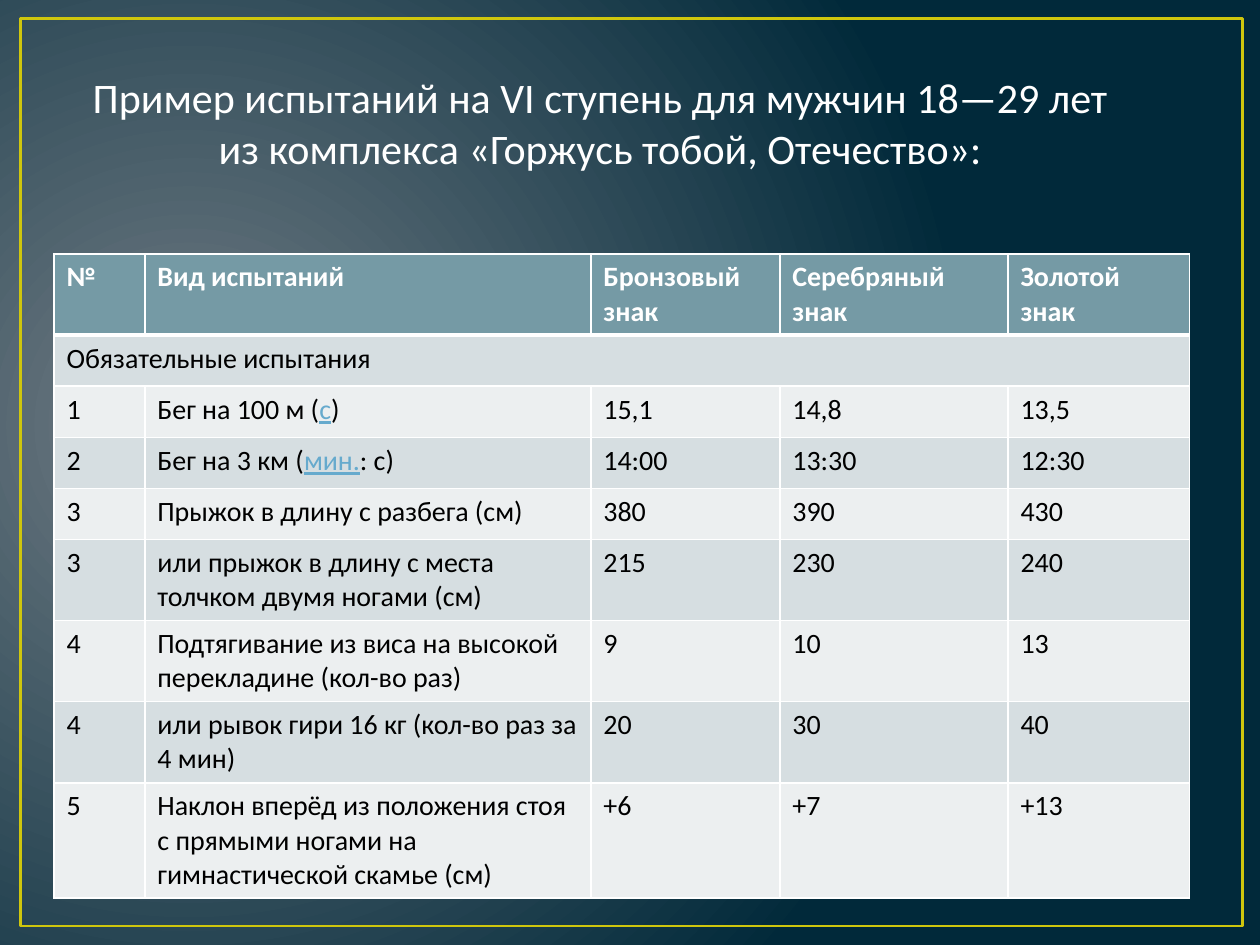
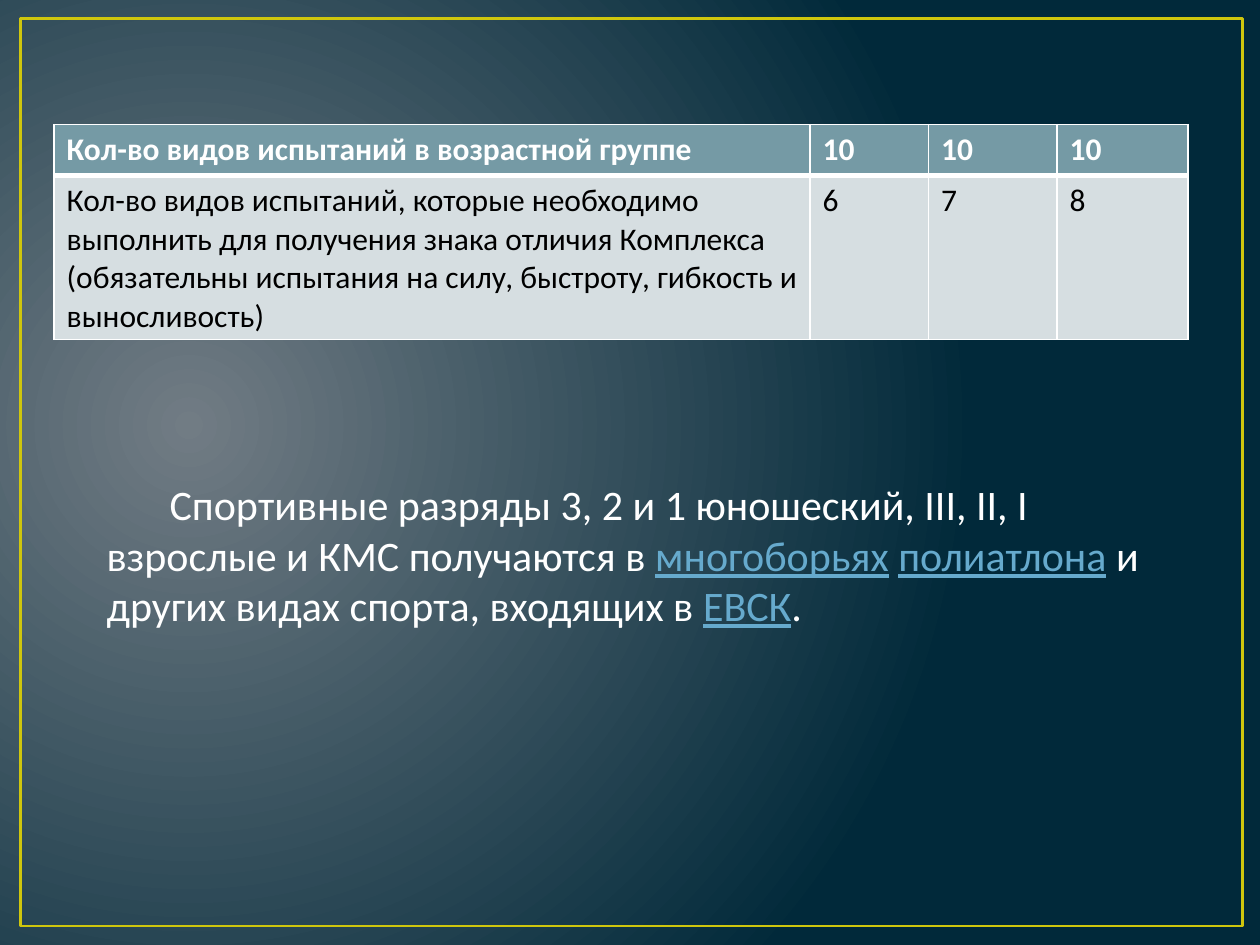
from lxml import etree
from pptx import Presentation
from pptx.dml.color import RGBColor
from pptx.enum import shapes, text
from pptx.oxml import parse_xml
from pptx.oxml.ns import nsdecls, qn
from pptx.util import Cm, Pt

FONT = "Calibri"
WHITE, BLACK, LINK = "FFFFFF", "000000", "66AACD"
GLOW, NIGHT, FRAME = "717C84", "01293A", "CFC60D"
HEAD, BANDS = "759AA5", ("D6DEE1", "ECEFF0")
LEFT, ROW = 1.09, 1.03

# Text between bars is drawn as a link.
TITLE = ("Пример испытаний на VI ступень для мужчин 18—29 лет "
         "из комплекса «Горжусь тобой, Отечество»:")
TESTS = [
    ("№", "Вид испытаний", "Бронзовый знак", "Серебряный знак", "Золотой знак"),
    ("Обязательные испытания",),
    ("1", "Бег на 100 м (|с|)", "15,1", "14,8", "13,5"),
    ("2", "Бег на 3 км (|мин.|: с)", "14:00", "13:30", "12:30"),
    ("3", "Прыжок в длину с разбега (см)", "380", "390", "430"),
    ("3", "или прыжок в длину с места толчком двумя ногами (см)", "215", "230", "240"),
    ("4", "Подтягивание из виса на высокой перекладине (кол-во раз)", "9", "10", "13"),
    ("4", "или рывок гири 16 кг (кол-во раз за 4 мин)", "20", "30", "40"),
    ("5", "Наклон вперёд из положения стоя с прямыми ногами на гимнастической скамье (см)",
     "+6", "+7", "+13"),
]
COUNTS = [
    ("Кол-во видов испытаний в возрастной группе", "10", "10", "10"),
    ("Кол-во видов испытаний, которые необходимо выполнить для получения знака отличия "
     "Комплекса (обязательны испытания на силу, быстроту, гибкость и выносливость)",
     "6", "7", "8"),
]
RANKS = ("Спортивные разряды 3, 2 и 1 юношеский, III, II, I взрослые и КМС получаются в "
         "|многоборьях| |полиатлона| и других видах спорта, входящих в |ЕВСК|.")

BACK = f"""<p:bg {nsdecls("p", "a")}><p:bgPr><a:gradFill rotWithShape="1"><a:gsLst>
<a:gs pos="0"><a:srgbClr val="{GLOW}"/></a:gs>
<a:gs pos="100000"><a:srgbClr val="{NIGHT}"/></a:gs></a:gsLst>
<a:path path="circle"><a:fillToRect l="15000" t="50000" r="85000" b="60000"/></a:path>
</a:gradFill><a:effectLst/></p:bgPr></p:bg>"""


def rgb(code):
    return RGBColor.from_string(code)


def base(deck):
    """Add a slide with the shared gradient and frame."""
    slide = deck.slides.add_slide(deck.slide_layouts[6])
    slide.element.cSld.insert(0, parse_xml(BACK))
    frame = slide.shapes.add_shape(shapes.MSO_SHAPE.RECTANGLE,
                                   Cm(0.41), Cm(0.38), Cm(24.64), Cm(18.29))
    frame.shadow.inherit = False
    frame.fill.background()
    frame.line.color.rgb = rgb(FRAME)
    frame.line.width = Pt(1.5)
    return slide


def write(para, words, size, color, bold=False):
    font = para.font
    font.name, font.size, font.bold = FONT, Pt(size), bold
    font.color.rgb = rgb(color)
    for i, part in enumerate(words.split("|")):
        run = para.add_run()
        run.text = part
        if i % 2:
            run.font.color.rgb = rgb(LINK)
            run.font.underline = True


def edge(cell, low):
    """Draw white borders, the lower one as wide as asked."""
    props = cell._tc.get_or_add_tcPr()
    for i, (side, width) in enumerate((("L", 1), ("R", 1), ("T", 1), ("B", low))):
        line = etree.Element(qn(f"a:ln{side}"), w=str(Pt(width)))
        fill = etree.SubElement(line, qn("a:solidFill"))
        etree.SubElement(fill, qn("a:srgbClr"), val=WHITE)
        props.insert(i, line)


def grid(slide, top, widths, rows, size):
    table = slide.shapes.add_table(len(rows), len(widths), Cm(LEFT), Cm(top),
                                   Cm(sum(widths)), Cm(ROW * len(rows))).table
    for col, width in zip(table.columns, widths):
        col.width = Cm(width)
    for r, row in enumerate(rows):
        table.rows[r].height = Cm(ROW)
        for cell in table.rows[r].cells:
            cell.fill.solid()
            cell.fill.fore_color.rgb = rgb(BANDS[(r - 1) % 2] if r else HEAD)
            edge(cell, 1 if r else 3)
        if len(row) == 1:
            table.cell(r, 0).merge(table.cell(r, len(widths) - 1))
        for c, words in enumerate(row):
            para = table.cell(r, c).text_frame.paragraphs[0]
            write(para, words, size, BLACK if r else WHITE, not r)


def note(slide, spot, words):
    """Add a wrapped text box and return its paragraph."""
    frame = slide.shapes.add_textbox(*map(Cm, spot)).text_frame
    frame.word_wrap = True
    frame.auto_size = text.MSO_AUTO_SIZE.SHAPE_TO_FIT_TEXT
    para = frame.paragraphs[0]
    write(para, words, 24, WHITE)
    return para


def main():
    deck = Presentation()
    deck.slide_width, deck.slide_height = Cm(25.4), Cm(19.05)

    slide = base(deck)
    grid(slide, 5.12, (1.83, 8.99, 3.81, 4.6, 3.66), TESTS, 16)
    note(slide, (1.5, 1.32, 21.2, 2.31), TITLE).alignment = text.PP_ALIGN.CENTER

    slide = base(deck)
    grid(slide, 2.51, (15.24, 2.39, 2.59, 2.64), COUNTS, 18)
    ranks = note(slide, (1.9, 9.53, 21.6, 3.33), RANKS)
    ranks._p.get_or_add_pPr().set("indent", str(Cm(1.27)))

    deck.save("out.pptx")


if __name__ == "__main__":
    main()
